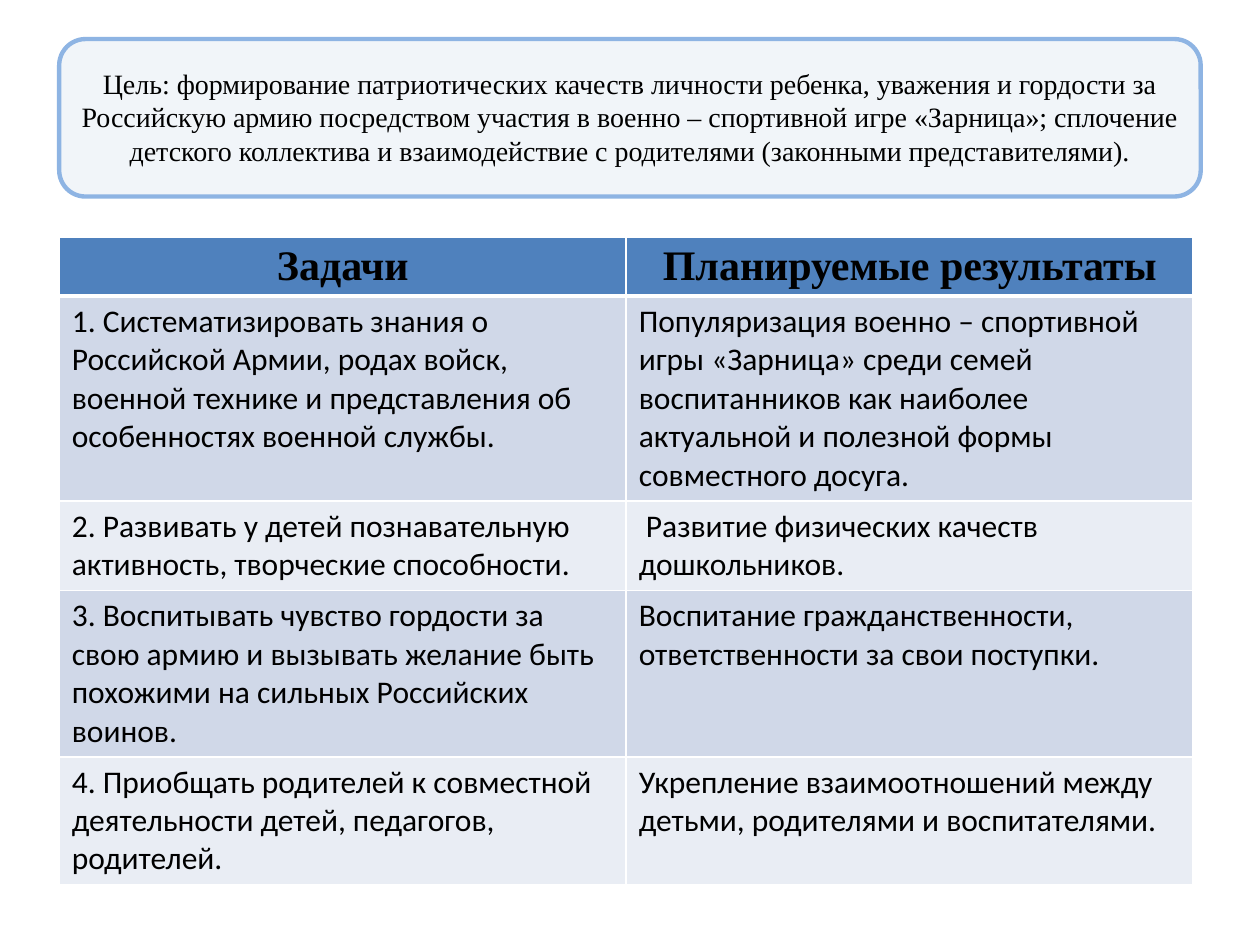
from dataclasses import dataclass

from lxml import etree
from pptx import Presentation
from pptx.dml.color import RGBColor
from pptx.enum.shapes import MSO_SHAPE
from pptx.enum.text import MSO_ANCHOR, MSO_AUTO_SIZE, PP_ALIGN
from pptx.oxml.ns import qn
from pptx.util import Inches, Pt

PANEL_SHAPE = MSO_SHAPE.FLOWCHART_ALTERNATE_PROCESS
CENTER, LEFT = PP_ALIGN.CENTER, PP_ALIGN.LEFT
MIDDLE = MSO_ANCHOR.MIDDLE
NO_AUTOFIT = MSO_AUTO_SIZE.NONE
TITLE_ONLY_LAYOUT = 5


@dataclass(frozen=True)
class Theme:
    accent: str = "4F81BD"
    outline: str = "8EB4E3"
    bands: tuple = ("D0D8E8", "E9EDF4")
    border: str = "FFFFFF"
    text: str = "000000"
    heading_font: str = "Times New Roman"
    body_font: str = "Calibri"
    goal_size: int = 16
    header_size: int = 24
    body_size: int = 18


THEME = Theme()

GOAL = (
    "Цель: формирование патриотических качеств личности ребенка, уважения и гордости за "
    "Российскую армию посредством участия в военно – спортивной игре «Зарница»; сплочение "
    "детского коллектива и взаимодействие с родителями (законными представителями)."
)
HEADERS = ("Задачи", "Планируемые результаты")
TASKS_AND_RESULTS = (
    (
        "1. Систематизировать знания о Российской Армии, родах войск, военной технике "
        "и представления об особенностях военной службы.",
        "Популяризация военно – спортивной игры «Зарница» среди семей воспитанников "
        "как наиболее актуальной и полезной формы совместного досуга.",
    ),
    (
        "2. Развивать у детей познавательную активность, творческие способности.",
        " Развитие физических качеств дошкольников.",
    ),
    (
        "3. Воспитывать чувство гордости за свою армию и вызывать желание быть похожими "
        "на сильных Российских воинов.",
        "Воспитание гражданственности, ответственности за свои поступки.",
    ),
    (
        "4. Приобщать родителей к совместной деятельности детей, педагогов, родителей.",
        "Укрепление взаимоотношений между детьми, родителями и воспитателями.",
    ),
)
ROW_HEIGHTS = (0.46, 1.61, 0.71, 1.32, 1.01)
COLUMN_WIDTH = 4.5


def write_text(text_frame, text, *, size, font, bold=False, align=LEFT):
    paragraph = text_frame.paragraphs[0]
    paragraph.alignment = align
    run = paragraph.add_run()
    run.text = text
    run.font.size = Pt(size)
    run.font.name = font
    run.font.bold = bold
    run.font.color.rgb = RGBColor.from_string(THEME.text)


def add_goal_panel(slide):
    panel = slide.shapes.add_shape(
        PANEL_SHAPE, Inches(0.47), Inches(0.31), Inches(9.06), Inches(1.25)
    )
    panel.shadow.inherit = False
    panel.fill.solid()
    panel.fill.fore_color.rgb = RGBColor.from_string(THEME.accent)
    color = panel.element.spPr.find(qn("a:solidFill")).find(qn("a:srgbClr"))
    etree.SubElement(color, qn("a:alpha"), val="8000")
    panel.line.color.rgb = RGBColor.from_string(THEME.outline)
    panel.line.width = Pt(2.5)
    return panel


def fill_title(title):
    title.left, title.top = Inches(0.5), Inches(0.3)
    title.width, title.height = Inches(9), Inches(1.25)
    frame = title.text_frame
    frame.word_wrap = True
    frame.auto_size = NO_AUTOFIT
    frame.vertical_anchor = MIDDLE
    write_text(frame, GOAL, size=THEME.goal_size, font=THEME.heading_font, align=CENTER)


def set_borders(cell, bottom_width=1, top_width=1):
    properties = cell._tc.get_or_add_tcPr()
    widths = {"lnL": 1, "lnR": 1, "lnT": top_width, "lnB": bottom_width}
    for side, width in widths.items():
        line = etree.SubElement(properties, qn(f"a:{side}"), w=str(Pt(width)))
        fill = etree.SubElement(line, qn("a:solidFill"))
        etree.SubElement(fill, qn("a:srgbClr"), val=THEME.border)


def fill_cell(cell, text, color, *, top_width=1, bottom_width=1, **text_format):
    # Borders come before the fill in the cell properties
    set_borders(cell, bottom_width, top_width)
    cell.fill.solid()
    cell.fill.fore_color.rgb = RGBColor.from_string(color)
    write_text(cell.text_frame, text, **text_format)


def add_tasks_table(slide):
    table = slide.shapes.add_table(
        len(ROW_HEIGHTS), len(HEADERS), Inches(0.47), Inches(1.88),
        Inches(COLUMN_WIDTH * len(HEADERS)), Inches(sum(ROW_HEIGHTS)),
    ).table
    for column in table.columns:
        column.width = Inches(COLUMN_WIDTH)
    for row, height in zip(table.rows, ROW_HEIGHTS):
        row.height = Inches(height)

    # Header row
    for index, text in enumerate(HEADERS):
        fill_cell(table.cell(0, index), text, THEME.accent, bottom_width=3,
                  size=THEME.header_size, font=THEME.heading_font, bold=True, align=CENTER)

    # Banded body rows
    for row_index, texts in enumerate(TASKS_AND_RESULTS, start=1):
        band = THEME.bands[(row_index - 1) % len(THEME.bands)]
        for column_index, text in enumerate(texts):
            fill_cell(table.cell(row_index, column_index), text, band,
                      top_width=3 if row_index == 1 else 1,
                      size=THEME.body_size, font=THEME.body_font)


def main():
    presentation = Presentation()
    presentation.slide_width, presentation.slide_height = Inches(10), Inches(7.5)
    slide = presentation.slides.add_slide(presentation.slide_layouts[TITLE_ONLY_LAYOUT])

    # Goal: panel behind the title
    title = slide.shapes.title
    panel = add_goal_panel(slide)
    title.element.addprevious(panel.element)
    fill_title(title)

    # Tasks and planned results
    add_tasks_table(slide)
    presentation.save("out.pptx")


if __name__ == "__main__":
    main()
